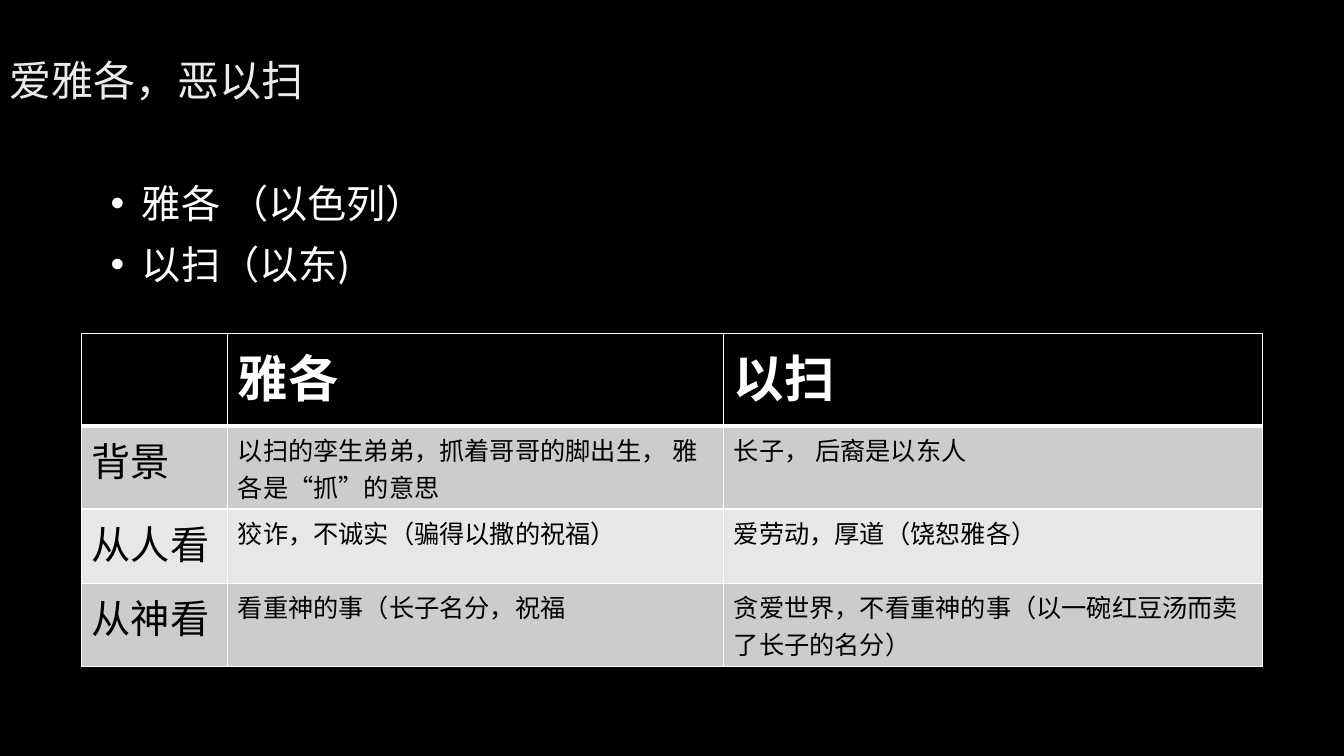
from lxml.etree import SubElement
from pptx import Presentation
from pptx.dml.color import RGBColor
from pptx.enum.text import MSO_ANCHOR as Anchor
from pptx.oxml.ns import qn
from pptx.util import Inches, Pt

WIDTH, HEIGHT = 13.33, 7.5
WHITE, BLACK = "FFFFFF", "000000"


def color(hex_text):
    return RGBColor.from_string(hex_text)


def write(paragraph, text, size=18, ink=WHITE, bold=False):
    run = paragraph.add_run()
    run.text = text
    run.font.name = "Calibri"
    run.font.size = Pt(size)
    run.font.bold = bold
    run.font.color.rgb = color(ink)


presentation = Presentation()
presentation.slide_width = Inches(WIDTH)
presentation.slide_height = Inches(HEIGHT)
slide = presentation.slides.add_slide(presentation.slide_layouts[6])
slide.background.fill.solid()
slide.background.fill.fore_color.rgb = color(BLACK)

# Title
title = slide.shapes.add_textbox(0, 0, Inches(11.08), Inches(1.59)).text_frame
title.word_wrap = True
title.vertical_anchor = Anchor.MIDDLE
write(title.paragraphs[0], "爱雅各，恶以扫", size=30, ink="EBEBEB")

# Bullets
bullets = slide.shapes.add_textbox(0, Inches(1.73), Inches(WIDTH), Inches(1.3)).text_frame
bullets.word_wrap = True
for index, text in enumerate(["雅各 （以色列）", "以扫（以东)"]):
    paragraph = bullets.add_paragraph() if index else bullets.paragraphs[0]
    properties = paragraph._p.get_or_add_pPr()
    properties.set("marL", str(Inches(1.31)))
    properties.set("indent", str(Inches(-0.31)))
    bullet_color = SubElement(properties, qn("a:buClr"))
    SubElement(bullet_color, qn("a:srgbClr"), val=WHITE)
    SubElement(properties, qn("a:buFont"), typeface="Arial")
    SubElement(properties, qn("a:buChar"), char="•")
    paragraph.line_spacing = Pt(33.6)
    paragraph.space_after = Pt(10)
    write(paragraph, text, size=28)

# Comparison table
column_widths = [1.45, 4.92, 5.34]
row_heights = [0.92, 0.82, 0.74, 0.82]
row_fills = [BLACK, "CCCCCC", "E7E7E7", "CCCCCC"]
rows = [
    ["", "雅各", "以扫"],
    ["背景", "以扫的孪生弟弟，抓着哥哥的脚出生， 雅各是“抓”的意思", "长子， 后裔是以东人"],
    ["从人看", "狡诈，不诚实（骗得以撒的祝福）", "爱劳动，厚道（饶恕雅各）"],
    ["从神看", "看重神的事（长子名分，祝福", "贪爱世界，不看重神的事（以一碗红豆汤而卖了长子的名分）"],
]
table = slide.shapes.add_table(
    len(rows), len(column_widths), Inches(0.81), Inches(3.31),
    Inches(sum(column_widths)), Inches(sum(row_heights))).table
for column, width in zip(table.columns, column_widths):
    column.width = Inches(width)
for row, height in zip(table.rows, row_heights):
    row.height = Inches(height)

for row_index, texts in enumerate(rows):
    is_header = row_index == 0
    for column_index, text in enumerate(texts):
        cell = table.cell(row_index, column_index)

        # Borders, with a thick rule under the header
        thick_side = {0: "lnB", 1: "lnT"}.get(row_index)
        for side in ("lnL", "lnR", "lnT", "lnB"):
            points = 3 if side == thick_side else 1
            line = SubElement(cell._tc.get_or_add_tcPr(), qn(f"a:{side}"), w=str(Pt(points)))
            SubElement(SubElement(line, qn("a:solidFill")), qn("a:srgbClr"), val=WHITE)

        cell.fill.solid()
        cell.fill.fore_color.rgb = color(row_fills[row_index])
        if text:
            size = 36 if is_header else 28 if column_index == 0 else 18
            write(cell.text_frame.paragraphs[0], text, size=size,
                  ink=WHITE if is_header else BLACK, bold=is_header)

presentation.save("out.pptx")
